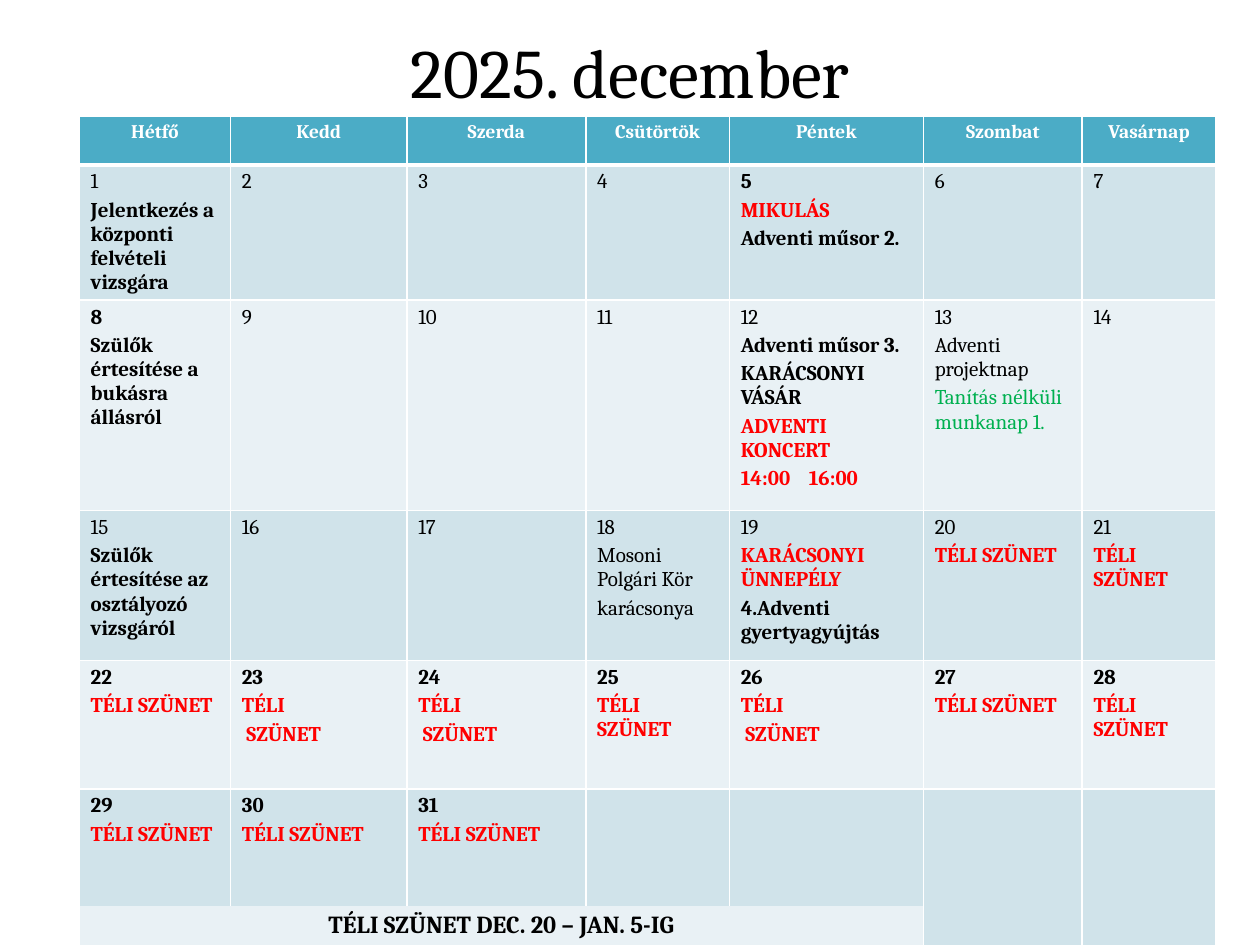
from pptx import Presentation
from pptx.dml.color import RGBColor
from pptx.enum.text import MSO_ANCHOR, PP_ALIGN
from pptx.oxml.ns import qn
from pptx.util import Inches, Pt
from lxml import etree

CENTER, LEFT = PP_ALIGN.CENTER, PP_ALIGN.LEFT
MIDDLE = MSO_ANCHOR.MIDDLE

FONT = "Cambria"
BLACK, WHITE, RED, GREEN = "000000", "FFFFFF", "FF0000", "00B050"
HEADER_FILL = "4BACC6"
BAND_FILLS = ["D0E3EA", "E9F1F5"]

COLUMN_WIDTHS = [1.2, 1.4, 1.42, 1.14, 1.54, 1.26, 1.06]
ROW_HEIGHTS = [0.39, 1.02, 1.67, 1.19, 1.02, 0.93, 0.48]
WEEKDAYS = ["Hétfő", "Kedd", "Szerda", "Csütörtök", "Péntek", "Szombat", "Vasárnap"]
LAST_DAY = 31
LAST_WEEK_ROW, NOTE_ROW = 5, 6
NOTE = "TÉLI SZÜNET DEC. 20 – JAN. 5-IG"

# Day -> lines of (text, colour, bold)
BOLD_DAYS = {5, 8, *range(22, LAST_DAY + 1)}
EVENTS = {
    1: [("Jelentkezés a központi felvételi vizsgára", BLACK, True)],
    5: [("MIKULÁS", RED, True), ("Adventi műsor 2.", BLACK, True)],
    8: [("Szülők értesítése a bukásra állásról", BLACK, True)],
    12: [("Adventi műsor 3.", BLACK, True), ("KARÁCSONYI VÁSÁR", BLACK, True),
         ("ADVENTI KONCERT", RED, True), ("14:00\t16:00", RED, True)],
    13: [("Adventi projektnap", BLACK, False),
         ("Tanítás nélküli munkanap 1.", GREEN, False)],
    15: [("Szülők értesítése az osztályozó vizsgáról", BLACK, True)],
    18: [("Mosoni Polgári Kör", BLACK, False), ("karácsonya", BLACK, False)],
    19: [("KARÁCSONYI ÜNNEPÉLY", RED, True), ("4.Adventi gyertyagyújtás", BLACK, True)],
}
# Winter break: every remaining day, on two lines where listed
TWO_LINE_BREAK_DAYS = {23, 24, 26}
for break_day in range(20, LAST_DAY + 1):
    break_lines = ["TÉLI", " SZÜNET"] if break_day in TWO_LINE_BREAK_DAYS else ["TÉLI SZÜNET"]
    EVENTS[break_day] = [(line, RED, True) for line in break_lines]


def rgb(color):
    return RGBColor.from_string(color)


def format_font(font, size, color, bold):
    font.name = FONT
    font.size = Pt(size)
    font.bold = bold
    font.color.rgb = rgb(color)


def add_tab_stop(paragraph, position):
    tab_list = etree.SubElement(paragraph._p.get_or_add_pPr(), qn("a:tabLst"))
    etree.SubElement(tab_list, qn("a:tab"), pos=str(position), algn="l")


def write_cell(cell, lines, size, align=LEFT):
    cell.text_frame.text = "\n".join(text for text, _, _ in lines)
    for i, (text, color, bold) in enumerate(lines):
        paragraph = cell.text_frame.paragraphs[i]
        paragraph.alignment = align
        if i:
            paragraph.space_before = Pt(size * 0.2)
        if "\t" in text:
            add_tab_stop(paragraph, Inches(0.54))
        for run in paragraph.runs:
            format_font(run.font, size, color, bold)


def style_cell(cell, fill, border_widths):
    """Border widths are in points, by side: L, R, T, B; 0 hides the line."""
    cell.margin_left = cell.margin_right = Inches(0.09)
    cell.margin_top = cell.margin_bottom = Inches(0.04)
    properties = cell._tc.get_or_add_tcPr()
    for side, width in border_widths.items():
        line = etree.SubElement(properties, qn(f"a:ln{side}"), w=str(Pt(width)))
        if width:
            color_fill = etree.SubElement(line, qn("a:solidFill"))
            etree.SubElement(color_fill, qn("a:srgbClr"), val=WHITE)
        else:
            etree.SubElement(line, qn("a:noFill"))
    cell.fill.solid()
    cell.fill.fore_color.rgb = rgb(fill)


def add_title(slide, text):
    title = slide.shapes.title
    title.left, title.top = Inches(0.5), Inches(0.21)
    title.width, title.height = Inches(9), Inches(0.71)
    title.text_frame.text = text
    title.text_frame.vertical_anchor = MIDDLE
    paragraph = title.text_frame.paragraphs[0]
    paragraph.alignment = CENTER
    format_font(paragraph.runs[0].font, 39.6, BLACK, False)


def add_calendar_grid(slide):
    frame = slide.shapes.add_table(
        len(ROW_HEIGHTS), len(COLUMN_WIDTHS), Inches(0.63), Inches(0.92),
        Inches(sum(COLUMN_WIDTHS)), Inches(sum(ROW_HEIGHTS)))
    calendar = frame.table
    for column, width in zip(calendar.columns, COLUMN_WIDTHS):
        column.width = Inches(width)
    for row, height in zip(calendar.rows, ROW_HEIGHTS):
        row.height = Inches(height)

    for r in range(len(ROW_HEIGHTS)):
        for c in range(len(COLUMN_WIDTHS)):
            borders = {"L": 1, "R": 1, "T": 1, "B": 1}
            fill = BAND_FILLS[(r - 1) % 2]
            if r == 0:
                fill = HEADER_FILL
                borders["B"] = 3
            elif r == 1:
                borders["T"] = 3
            elif c < 5 and r == LAST_WEEK_ROW:
                borders["B"] = 0
            elif c < 5 and r == NOTE_ROW:
                borders["T"] = 0
            style_cell(calendar.cell(r, c), fill, borders)

    # The note spans the working week, the empty weekend cells span two rows
    calendar.cell(NOTE_ROW, 0).merge(calendar.cell(NOTE_ROW, 4))
    for c in (5, 6):
        calendar.cell(LAST_WEEK_ROW, c).merge(calendar.cell(NOTE_ROW, c))
    return calendar


def fill_calendar(calendar):
    for c, weekday in enumerate(WEEKDAYS):
        write_cell(calendar.cell(0, c), [(weekday, WHITE, True)], 11, CENTER)
    # The month starts on a Monday
    for day in range(1, LAST_DAY + 1):
        week, weekday = divmod(day - 1, len(WEEKDAYS))
        lines = [(str(day), BLACK, day in BOLD_DAYS)] + EVENTS.get(day, [])
        write_cell(calendar.cell(week + 1, weekday), lines, 12)
    write_cell(calendar.cell(NOTE_ROW, 0), [(NOTE, BLACK, True)], 14, CENTER)


def main():
    presentation = Presentation()
    presentation.slide_width = Inches(10)
    presentation.slide_height = Inches(7.5)
    slide = presentation.slides.add_slide(presentation.slide_layouts[5])
    add_title(slide, "2025. december")
    fill_calendar(add_calendar_grid(slide))
    presentation.save("out.pptx")


if __name__ == "__main__":
    main()
